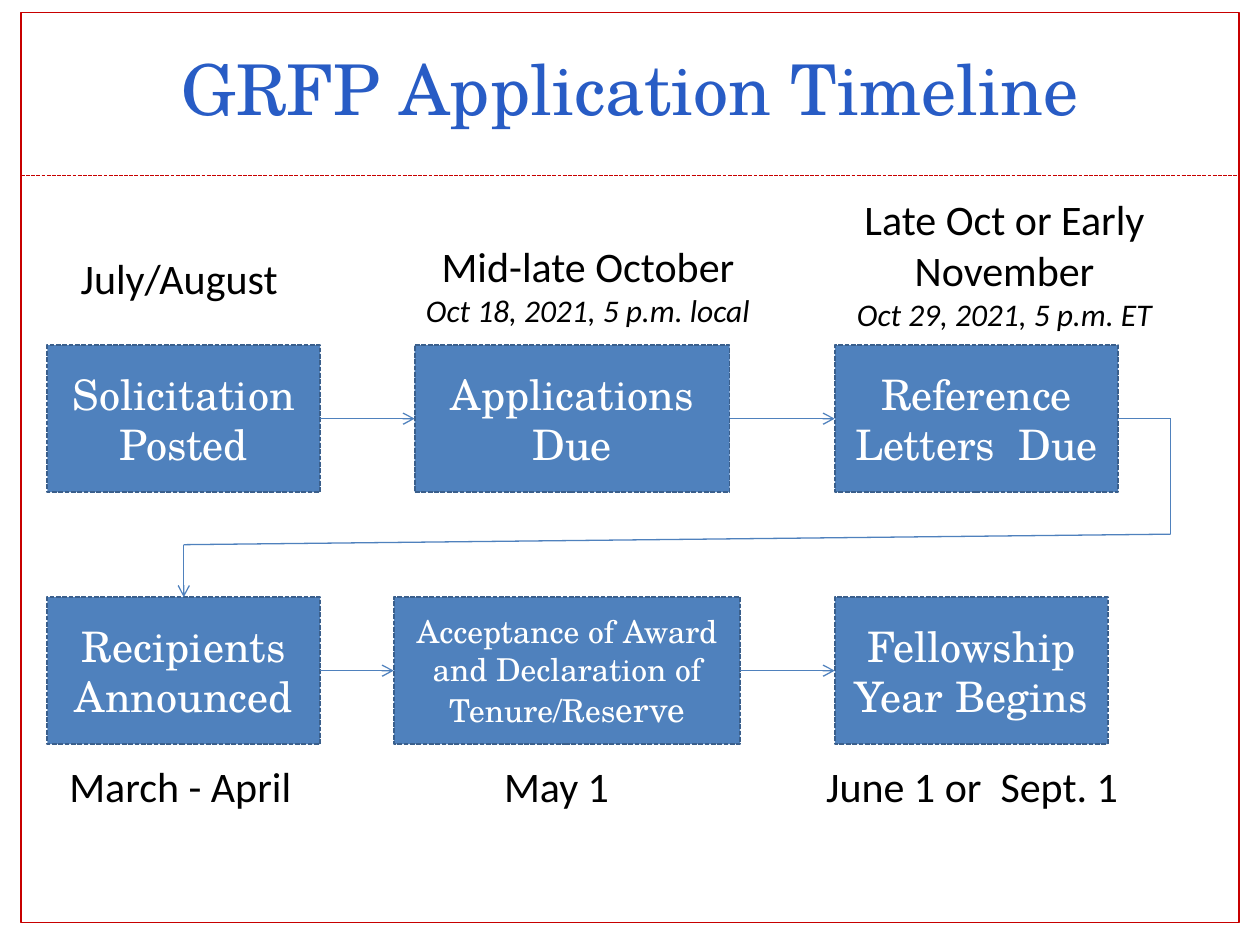
from lxml import etree
from pptx import Presentation
from pptx import util as u
from pptx.dml.color import RGBColor
from pptx.enum import dml, shapes, text
from pptx.oxml import ns

RED, BLUE, WHITE, BLACK = "C70000", "4F81BD", "FFFFFF", "000000"
SERIF, SANS = "TeX Gyre Schola", "Calibri"
LEFT, CENTER = text.PP_ALIGN.LEFT, text.PP_ALIGN.CENTER
TOP, MIDDLE, BOTTOM = text.MSO_ANCHOR.TOP, text.MSO_ANCHOR.MIDDLE, text.MSO_ANCHOR.BOTTOM


def color(value):
    return RGBColor.from_string(value)


class TimelineSlide:
    box_format = {"name": SERIF, "color": WHITE}
    date_format = {"name": SANS, "color": BLACK}
    title_format = {"name": SERIF, "color": "285CC5"}

    def __init__(self, presentation):
        self.slide = presentation.slides.add_slide(presentation.slide_layouts[6])

    def set_line(self, line, hex_color, width, dashed=False):
        line.color.rgb = color(hex_color)
        line.width = u.Pt(width)
        if dashed:
            line.dash_style = dml.MSO_LINE.SQUARE_DOT

    def add_text(self, shape, runs, style, align=CENTER, anchor=TOP):
        """Fill a shape with (text, size, italic) runs; "\\n" breaks the line."""
        frame = shape.text_frame
        frame.word_wrap = True
        frame.vertical_anchor = anchor
        paragraph = frame.paragraphs[0]
        paragraph.alignment = align
        for content, size, italic in runs:
            for index, part in enumerate(content.split("\n")):
                if index:
                    paragraph.add_line_break()
                if not part:
                    continue
                run = paragraph.add_run()
                run.text = part
                values = {"name": style["name"], "size": u.Pt(size), "italic": italic}
                for name, value in values.items():
                    setattr(run.font, name, value)
                run.font.color.rgb = color(style["color"])

    def rectangle(self, left, top, width, height):
        shape = self.slide.shapes.add_shape(
            shapes.MSO_SHAPE.RECTANGLE, *map(u.Pt, (left, top, width, height)))
        shape.shadow.inherit = False
        return shape

    def frame(self, left, top, width, height):
        shape = self.rectangle(left, top, width, height)
        shape.fill.background()
        self.set_line(shape.line, RED, 0.75)

    def step(self, left, top, width, height, runs):
        shape = self.rectangle(left, top, width, height)
        shape.fill.solid()
        shape.fill.fore_color.rgb = color(BLUE)
        self.set_line(shape.line, "3A5F8C", 0.9, dashed=True)
        self.add_text(shape, runs, self.box_format, anchor=MIDDLE)

    def label(self, left, top, width, height, runs, style=date_format,
              align=CENTER, anchor=TOP):
        shape = self.slide.shapes.add_textbox(*map(u.Pt, (left, top, width, height)))
        self.add_text(shape, runs, style, align, anchor)

    def line(self, start, end, hex_color=BLUE, dashed=False, arrow=False):
        connector = self.slide.shapes.add_connector(
            shapes.MSO_CONNECTOR.STRAIGHT, *map(u.Pt, (*start, *end)))
        self.set_line(connector.line, hex_color, 0.75, dashed)
        properties = connector._element.spPr
        if arrow:
            outline = properties.find(ns.qn("a:ln"))
            etree.SubElement(outline, ns.qn("a:tailEnd"), type="arrow")
        etree.SubElement(properties, ns.qn("a:effectLst"))


def main():
    presentation = Presentation()
    presentation.slide_width, presentation.slide_height = u.Pt(720), u.Pt(540)
    page = TimelineSlide(presentation)

    # Frame and title
    page.frame(12, 7.2, 696, 520)
    page.line((12, 100.5), (708, 100.5), RED, dashed=True)
    page.label(24, 0, 672, 77.75, [("GRFP Application Timeline", 40, False)],
               page.title_format, anchor=BOTTOM)

    # Steps: left, width and text runs, row by row
    height = 84
    rows = [
        (197.25, [
            (27, 156, [("Solicitation Posted", 24, False)]),
            (237, 180, [("Applications Due", 24, False)]),
            (477, 162, [("Reference Letters  Due", 24, False)])]),
        (341.25, [
            (27, 156, [("Recipients Announced", 24, False)]),
            (225, 198, [("Acceptance of Award and Declaration of Tenure/Res", 18, False),
                        ("erve", 20, False)]),
            (477, 156, [("Fellowship Year Begins", 24, False)])]),
    ]
    for top, steps in rows:
        for left, width, runs in steps:
            page.step(left, top, width, height, runs)
        # Arrows between neighbours
        middle = top + height / 2
        for (left, width, _), (next_left, _, _) in zip(steps, steps[1:]):
            page.line((left + width, middle), (next_left, middle), arrow=True)

    # Route from the first row down to the second
    route = [(639, 239.25), (669, 239.25), (669, 305.25), (105, 311.25), (105, 341.25)]
    segments = list(zip(route, route[1:]))
    for start, end in segments:
        page.line(start, end, arrow=(start, end) == segments[-1])

    # Dates above the first row
    page.label(39, 141, 132, 36, [("July/August", 24, False)], align=LEFT)
    page.label(219, 134, 234, 58, [("Mid-late October\n", 24, False),
                                   ("Oct 18, 2021, 5 p.m. local", 18, True)])
    page.label(467, 107.25, 214, 87, [("Late Oct or Early November\n", 24, False),
                                      ("Oct 29, 2021, 5 p.m. ET", 18, True)])

    # Dates below the second row
    for left, width, content, align in [
            (32.5, 180, "March - April", LEFT),
            (225, 186, "May 1", CENTER),
            (465, 228, "June 1 or  Sept. 1", LEFT)]:
        page.label(left, 431.25, width, 36, [(content, 24, False)], align=align)

    presentation.save("out.pptx")


if __name__ == "__main__":
    main()
